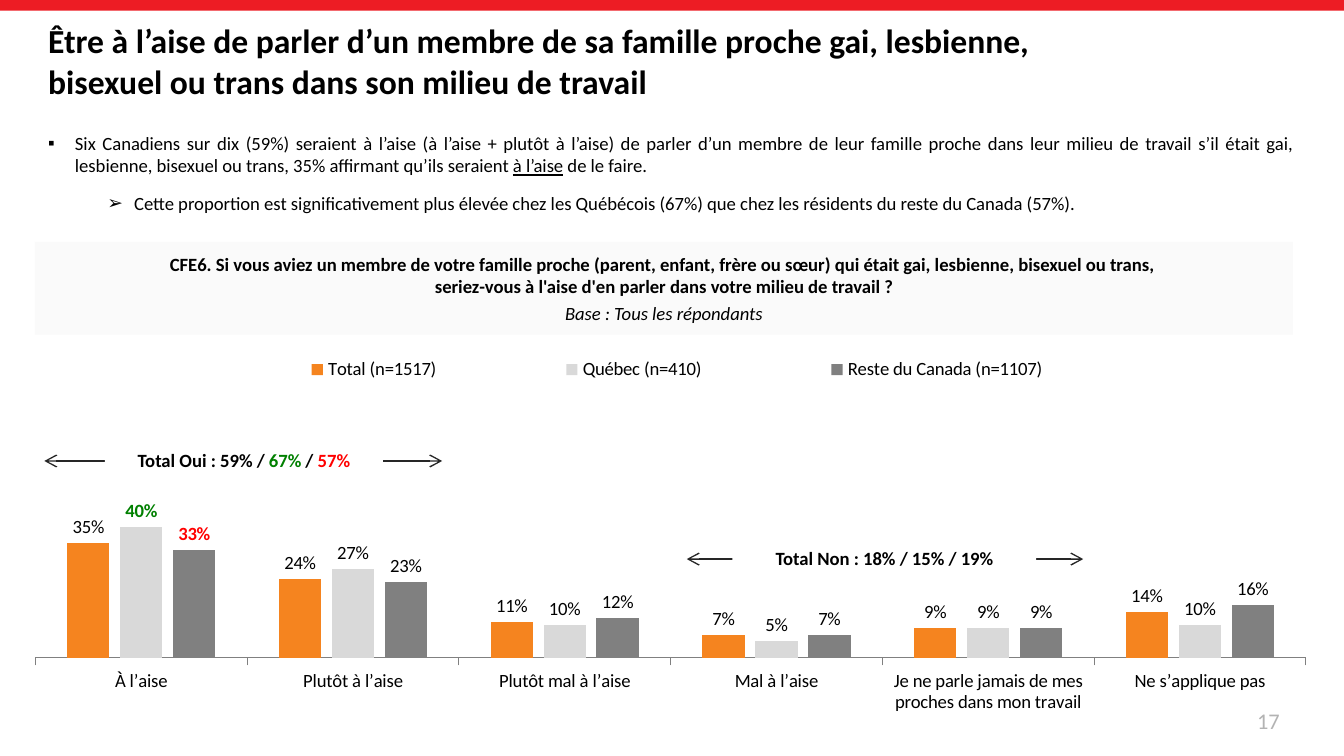
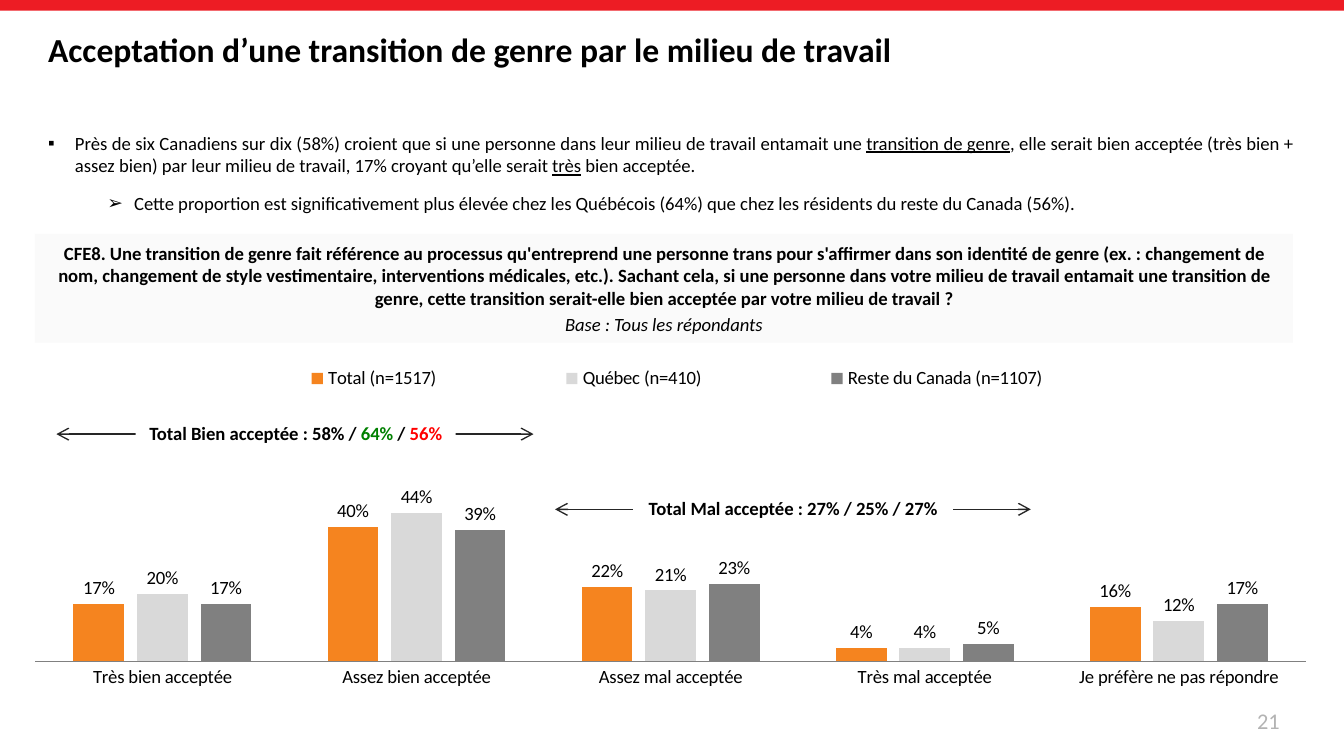
from dataclasses import dataclass

from pptx import Presentation
from pptx import util as u
from pptx.chart import data as chart_data
from pptx.dml.color import RGBColor
from pptx.enum import chart as ch, shapes, text
from pptx.oxml import parse_xml
from pptx.oxml.ns import nsdecls


@dataclass(frozen=True)
class Theme:
    font: str = "Calibri"
    chart_font: str = "Arial"
    title: int = 18
    number: int = 12
    body: int = 10
    chart: int = 9
    black: str = "000000"
    white: str = "FFFFFF"
    band: str = "ED1C24"
    panel: str = "FAFAFA"
    page: str = "B3B3B3"
    arrow: str = "262626"
    axis: str = "808080"
    higher: str = "008000"
    lower: str = "FF0000"
    series: tuple = ("F5841F", "D9D9D9", "808080")


T = Theme()
CENTER, RIGHT, JUSTIFY = text.PP_ALIGN.CENTER, text.PP_ALIGN.RIGHT, text.PP_ALIGN.JUSTIFY
MIDDLE, TOP = text.MSO_ANCHOR.MIDDLE, text.MSO_ANCHOR.TOP
UNDERLINE = {"underline": True}
HIGHER, LOWER = {"color": T.higher}, {"color": T.lower}


def add_box(slide, at, fill=None, anchor=MIDDLE):
    """Add a text box, or a filled rectangle when a fill is given."""
    place = [u.Inches(n) for n in at]
    if fill:
        box = slide.shapes.add_shape(shapes.MSO_SHAPE.RECTANGLE, *place)
        box.shadow.inherit = False
        box.fill.solid()
        box.fill.fore_color.rgb = RGBColor.from_string(fill)
        box.line.fill.background()
    else:
        box = slide.shapes.add_textbox(*place)
    box.text_frame.word_wrap = True
    box.text_frame.vertical_anchor = anchor
    return box.text_frame


def write(frame, runs, size=T.body, color=T.black, bold=False, italic=False,
          align=None, before=0, after=0, bullet=None, indent=0):
    """Write one paragraph; runs is a string or a list of (text, format) pairs."""
    first = frame.paragraphs[0]
    paragraph = frame.add_paragraph() if first.runs else first
    paragraph.alignment = align
    paragraph.space_before = u.Pt(before)
    paragraph.space_after = u.Pt(after)
    if bullet:
        props = paragraph._p.get_or_add_pPr()
        props.set("marL", str(u.Inches(indent)))
        props.set("indent", str(u.Inches(-0.2)))
        props.append(parse_xml(f'<a:buFont {nsdecls("a")} typeface="{T.chart_font}"/>'))
        props.append(parse_xml(f'<a:buChar {nsdecls("a")} char="{bullet}"/>'))
    for words, change in [(runs, {})] if isinstance(runs, str) else runs:
        run = paragraph.add_run()
        run.text = words
        run.font.name = T.font
        run.font.size = u.Pt(size)
        run.font.bold = bold
        run.font.italic = italic
        run.font.underline = change.get("underline", False)
        run.font.color.rgb = RGBColor.from_string(change.get("color", color))
    return paragraph


# Content of the two slides
GROUPS = ("Total (n=1517)", "Québec (n=410)", "Reste du Canada (n=1107)")
PAGES = [
    {
        "title": "Être à l’aise de parler d’un membre de sa famille proche gai, lesbienne, "
                 "bisexuel ou trans dans son milieu de travail",
        "title_size": (7.92, 0.74),
        "number": "17",
        "finding": [
            ("Six Canadiens sur dix (59%) seraient à l’aise (à l’aise + plutôt à l’aise) de parler "
             "d’un membre de leur famille proche dans leur milieu de travail s’il était gai, "
             "lesbienne, bisexuel ou trans, 35% affirmant qu’ils seraient ", {}),
            ("à l’aise", UNDERLINE),
            (" de le faire. ", {}),
        ],
        "detail": "Cette proportion est significativement plus élevée chez les Québécois (67%) "
                  "que chez les résidents du reste du Canada (57%).",
        "question_span": (1.8, 0.69),
        "question": [
            "CFE6. Si vous aviez un membre de votre famille proche (parent, enfant, frère ou sœur) "
            "qui était gai, lesbienne, bisexuel ou trans, ",
            "seriez-vous à l'aise d'en parler dans votre milieu de travail ?",
        ],
        "answers": ["À l’aise", "Plutôt à l’aise", "Plutôt mal à l’aise", "Mal à l’aise",
                    "Je ne parle jamais de mes proches dans mon travail", "Ne s’applique pas"],
        "shares": [(0.35, 0.24, 0.11, 0.07, 0.09, 0.14),
                   (0.40, 0.27, 0.10, 0.05, 0.09, 0.10),
                   (0.33, 0.23, 0.12, 0.07, 0.09, 0.16)],
        "marked": [(1, 0, T.higher), (2, 0, T.lower)],
        "chart_height": 3.04,
        "plot_height": 0.64,
        "legend_top": 0.1,
        "tick": ch.XL_TICK_MARK.OUTSIDE,
        # each total: arrow start, arrow end, height on slide, label left, label width, label
        "totals": [
            (0.33, 3.29, 3.43, 0.78, 2.07, [("Total Oui : 59% / ", {}), ("67%", HIGHER),
                                            (" / ", {}), ("57%", LOWER)]),
            (5.11, 8.06, 4.16, 5.45, 2.26, "Total Non : 18% / 15% / 19%"),
        ],
    },
    {
        "title": "Acceptation d’une transition de genre par le milieu de travail",
        "title_size": (8.17, 0.57),
        "number": "21",
        "finding": [
            ("Près de six Canadiens sur dix (58%) croient que si une personne dans leur milieu de "
             "travail entamait une ", {}),
            ("transition de genre", UNDERLINE),
            (", elle serait bien acceptée (très bien + assez bien) par leur milieu de travail, "
             "17% croyant qu’elle serait ", {}),
            ("très", UNDERLINE),
            (" bien acceptée. ", {}),
        ],
        "detail": "Cette proportion est significativement plus élevée chez les Québécois (64%) "
                  "que chez les résidents du reste du Canada (56%).",
        "question_span": (1.74, 0.81),
        "question": [
            "CFE8. Une transition de genre fait référence au processus qu'entreprend une personne "
            "trans pour s'affirmer dans son identité de genre (ex. : changement de nom, changement "
            "de style vestimentaire, interventions médicales, etc.). Sachant cela, si une personne "
            "dans votre milieu de travail entamait une transition de genre, cette transition "
            "serait-elle bien acceptée par votre milieu de travail ?",
        ],
        "answers": ["Très bien acceptée", "Assez bien acceptée", "Assez mal acceptée",
                    "Très mal acceptée", "Je préfère ne pas répondre"],
        "shares": [(0.17, 0.40, 0.22, 0.04, 0.16),
                   (0.20, 0.44, 0.21, 0.04, 0.12),
                   (0.17, 0.39, 0.23, 0.05, 0.17)],
        "marked": [],
        "chart_height": 2.9,
        "plot_height": 0.69,
        "legend_top": 0.13,
        "tick": ch.XL_TICK_MARK.NONE,
        "totals": [
            (0.42, 3.97, 3.23, 1.01, 2.38, [("Total Bien acceptée : 58% / ", {}), ("64%", HIGHER),
                                            (" / ", {}), ("56%", LOWER)]),
            (4.13, 7.67, 3.79, 4.71, 2.38, "Total Mal acceptée : 27% / 25% / 27%"),
        ],
    },
]

# Widescreen, 16:9
deck = Presentation()
deck.slide_width = u.Inches(10)
deck.slide_height = u.Emu(deck.slide_width * 9 // 16)

for page in PAGES:
    slide = deck.slides.add_slide(deck.slide_layouts[6])

    # Band, title and page number
    add_box(slide, (0, 0, 10, 0.08), fill=T.band)
    write(add_box(slide, (0.26, 0.08, *page["title_size"])), page["title"],
          size=T.title, bold=True)
    write(add_box(slide, (7.29, 5.21, 2.33, 0.3)), page["number"],
          size=T.number, color=T.page, align=RIGHT)

    # Findings
    findings = add_box(slide, (0.26, 0.93, 9.46, 0.71), anchor=TOP)
    write(findings, page["finding"], align=JUSTIFY, after=6, bullet="▪", indent=0.2)
    write(findings, page["detail"], align=JUSTIFY, before=2, after=6,
          bullet="➢", indent=0.64).level = 1

    # Survey question
    top, height = page["question_span"]
    question = add_box(slide, (0.26, top, 9.36, height), fill=T.panel)
    for line in page["question"]:
        write(question, line, bold=True, align=CENTER)
    write(question, "Base : Tous les répondants", italic=True, align=CENTER, before=2)

    # Answers by group
    answers = chart_data.CategoryChartData(number_format="0%")
    answers.categories = page["answers"]
    for group, shares in zip(GROUPS, page["shares"]):
        answers.add_series(group, shares)
    chart = slide.shapes.add_chart(
        ch.XL_CHART_TYPE.COLUMN_CLUSTERED, u.Inches(0.26), u.Inches(2.31),
        u.Inches(9.46), u.Inches(page["chart_height"]), answers).chart
    chart.has_title = False
    chart.font.name, chart.font.size = T.chart_font, u.Pt(T.chart)
    chart.font.color.rgb = RGBColor.from_string(T.black)

    share_axis = chart.value_axis
    share_axis.visible = False
    share_axis.has_major_gridlines = False
    share_axis.minimum_scale, share_axis.maximum_scale = 0, 0.8
    share_axis.major_unit = 0.1
    share_axis.tick_labels.number_format = "0%"
    share_axis.tick_labels.number_format_is_linked = False

    answer_axis = chart.category_axis
    answer_axis.major_tick_mark = page["tick"]
    answer_axis.format.line.color.rgb = RGBColor.from_string(T.axis)
    answer_axis.format.line.width = u.Pt(0.5)

    chart.has_legend = True
    chart.legend.position = ch.XL_LEGEND_POSITION.TOP
    chart.legend.include_in_layout = False

    bars = chart.plots[0]
    bars.gap_width, bars.overlap = 150, -25
    bars.vary_by_categories = False
    label_fonts = [answer_axis.tick_labels.font, chart.legend.font]
    for group, color in zip(bars.series, T.series):
        group.format.fill.solid()
        group.format.fill.fore_color.rgb = RGBColor.from_string(color)
        labels = group.data_labels
        labels.show_value = True
        labels.number_format, labels.number_format_is_linked = "0%", False
        labels.position = ch.XL_LABEL_POSITION.OUTSIDE_END
        label_fonts.append(labels.font)
    for font in label_fonts:
        font.name, font.size = T.font, u.Pt(T.body)
        font.color.rgb = RGBColor.from_string(T.black)
    for group, answer, color in page["marked"]:
        label = bars.series[group].points[answer].data_label
        label.position = ch.XL_LABEL_POSITION.OUTSIDE_END
        label.font.name, label.font.size, label.font.bold = T.font, u.Pt(T.body), True
        label.font.color.rgb = RGBColor.from_string(color)

    # Fixed places of the plot and the legend inside the chart
    for automatic in chart.element.xpath(".//c:plotArea/c:layout | .//c:legend/c:layout"):
        automatic.getparent().remove(automatic)
    for part, position, target, (x, y, w, h) in (
            ("plotArea", 0, '<c:layoutTarget val="inner"/>', (0, 0.21, 1, page["plot_height"])),
            ("legend", 1, "", (0.12, page["legend_top"], 0.77, 0.09))):
        chart.element.xpath(f".//c:{part}")[0].insert(position, parse_xml(
            f'<c:layout {nsdecls("c")}><c:manualLayout>{target}'
            f'<c:xMode val="edge"/><c:yMode val="edge"/><c:x val="{x}"/><c:y val="{y}"/>'
            f'<c:w val="{w}"/><c:h val="{h}"/></c:manualLayout></c:layout>'))

    # Totals, each over a double arrow
    for start, end, y, left, width, total in page["totals"]:
        arrow = slide.shapes.add_connector(
            shapes.MSO_CONNECTOR.STRAIGHT,
            u.Inches(start), u.Inches(y), u.Inches(end), u.Inches(y))
        arrow.line.color.rgb = RGBColor.from_string(T.arrow)
        arrow.line.width = u.Pt(0.75)
        for tip in ("headEnd", "tailEnd"):
            arrow.line._get_or_add_ln().append(
                parse_xml(f'<a:{tip} {nsdecls("a")} type="arrow"/>'))
        arrow.element.spPr.append(parse_xml(f'<a:effectLst {nsdecls("a")}/>'))

        label = add_box(slide, (left, y - 0.13, width, 0.25), fill=T.white, anchor=TOP)
        label.margin_left = label.margin_right = u.Inches(0.04)
        label.margin_top = label.margin_bottom = u.Inches(0.04)
        label.auto_size = text.MSO_AUTO_SIZE.SHAPE_TO_FIT_TEXT
        write(label, total, bold=True, align=CENTER)

deck.save("out.pptx")
